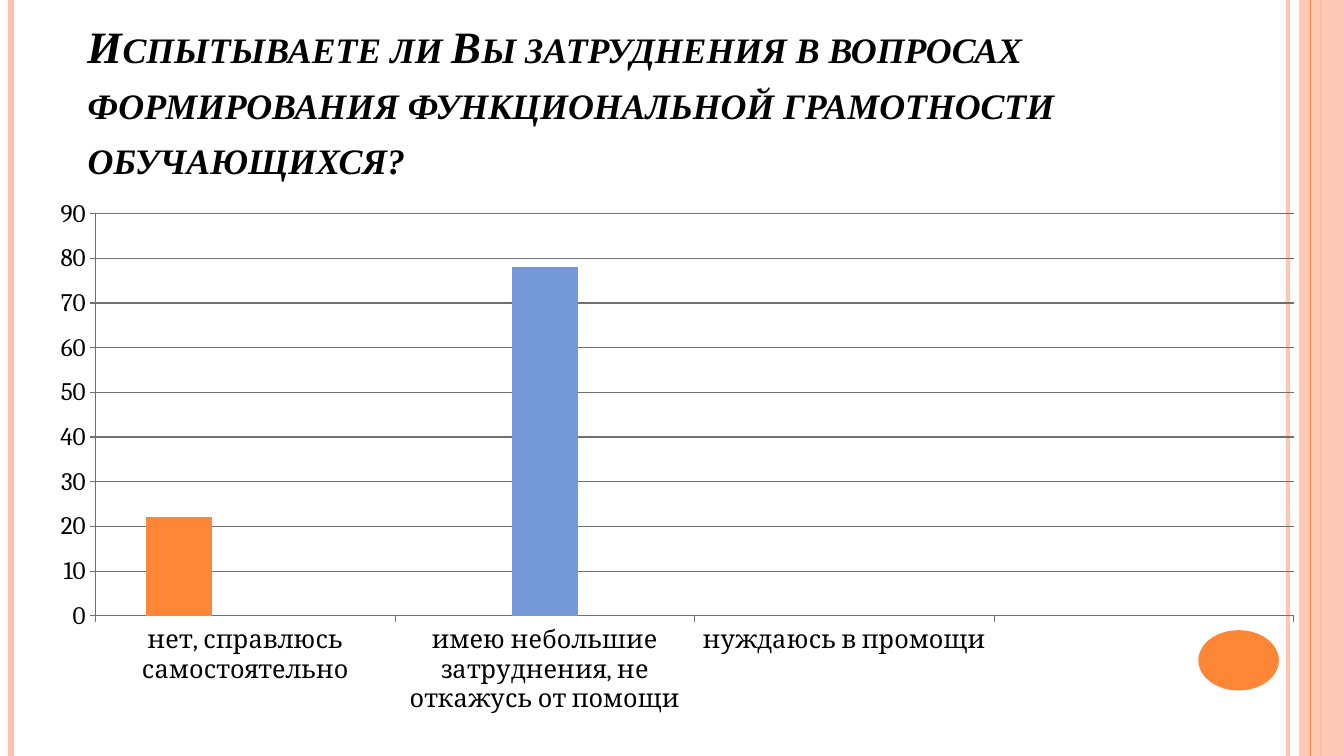
from lxml import etree
from pptx import Presentation
from pptx.chart.data import CategoryChartData
from pptx.dml.color import RGBColor
from pptx.enum.chart import XL_CHART_TYPE, XL_TICK_MARK
from pptx.enum.shapes import MSO_CONNECTOR, MSO_SHAPE
from pptx.enum.text import MSO_ANCHOR
from pptx.oxml import parse_xml
from pptx.oxml.ns import nsdecls, qn
from pptx.util import Cm, Pt

COLUMNS = XL_CHART_TYPE.COLUMN_CLUSTERED
OUTSIDE = XL_TICK_MARK.OUTSIDE
STRAIGHT = MSO_CONNECTOR.STRAIGHT
RECTANGLE, OVAL = MSO_SHAPE.RECTANGLE, MSO_SHAPE.OVAL
BOTTOM = MSO_ANCHOR.BOTTOM

WIDTH, HEIGHT = 33.87, 19.05
PEACH, ORANGE, BLUE, RED = "FEC3AE", "FE8637", "7598D9", "B32C16"
BLACK, GREY = "000000", "707070"
TITLE = ("Испытываете ли Вы затруднения в вопросах формирования "
         "функциональной грамотности обучающихся?")
ANSWERS = ["нет, справлюсь самостоятельно",
           "имею небольшие затруднения, не откажусь от помощи",
           "нуждаюсь в промощи", ""]
SERIES = [("Series 1", [22, None, None, None], ORANGE),
          ("Series 2", [None, 78, None, None], BLUE),
          ("Series 3", [None, None, None, None], RED)]
BACK_STRIPES = [(32.46, PEACH, 3, 93), (0.28, PEACH, 4.5, 100), (33.3, ORANGE, 1.5, 100)]
FRONT_STRIPE = (33.02, ORANGE, 0.75, 100)
BAND = (32.74, 0, 1.13, HEIGHT)
DOT = (30.2, 15.88, 2.03, 1.52)
TITLE_BOX = (1.96, 1.57, 27.66, 3.18)
CHART_BOX = (0.89, 4.75, 32.36, 13.51)
PLOT_AREA = {"x": 0.047, "y": 0.047, "w": 0.933, "h": 0.75}


def paint(color_format, color):
    color_format.rgb = RGBColor.from_string(color)


def set_opacity(element, percent):
    if percent < 100:
        color = next(element.iter(qn("a:srgbClr")))
        etree.SubElement(color, qn("a:alpha")).set("val", str(percent * 1000))


def add_stripe(page, x, color, weight, opacity):
    stripe = page.shapes.add_connector(STRAIGHT, Cm(x), Cm(0), Cm(x), Cm(HEIGHT))
    paint(stripe.line.color, color)
    stripe.line.width = Pt(weight)
    properties = stripe._element.spPr
    set_opacity(properties, opacity)
    etree.SubElement(properties, qn("a:effectLst"))


def add_filled(page, kind, place, color, opacity=100):
    shape = page.shapes.add_shape(kind, *map(Cm, place))
    shape.shadow.inherit = False
    shape.fill.solid()
    paint(shape.fill.fore_color, color)
    shape.line.fill.background()
    set_opacity(shape._element.spPr, opacity)


def add_title(page):
    box = page.shapes.add_textbox(*map(Cm, TITLE_BOX))
    frame = box.text_frame
    frame.word_wrap = True
    frame.vertical_anchor = BOTTOM
    para = frame.paragraphs[0]
    para.line_spacing = 1.03
    span = para.add_run()
    span.text = TITLE
    font = span.font
    font.name, font.size = "Times New Roman", Pt(32)
    font.bold = font.italic = True
    paint(font.color, BLACK)
    span._r.get_or_add_rPr().set("cap", "small")


def add_answer_chart(page):
    data = CategoryChartData()
    data.categories = ANSWERS
    for name, values, color in SERIES:
        data.add_series(name, values)
    chart = page.shapes.add_chart(COLUMNS, *map(Cm, CHART_BOX), data).chart
    chart.has_legend = chart.has_title = False
    chart.font.name, chart.font.size = "Cambria", Pt(18)
    paint(chart.font.color, BLACK)

    plot = chart.plots[0]
    plot.gap_width, plot.overlap = 150, 0
    plot.vary_by_categories = False
    for series, (name, values, color) in zip(plot.series, SERIES):
        series.format.fill.solid()
        paint(series.format.fill.fore_color, color)

    scale = chart.value_axis
    scale.minimum_scale, scale.maximum_scale, scale.major_unit = 0, 90, 10
    scale.has_major_gridlines = True
    for axis in (scale, chart.category_axis):
        axis.major_tick_mark = OUTSIDE
        paint(axis.format.line.color, GREY)
    paint(scale.major_gridlines.format.line.color, GREY)

    sizes = "".join(f'<c:{key} val="{part}"/>' for key, part in PLOT_AREA.items())
    layout = parse_xml(
        f'<c:layout {nsdecls("c")}><c:manualLayout><c:layoutTarget val="inner"/>'
        f'<c:xMode val="edge"/><c:yMode val="edge"/>{sizes}</c:manualLayout></c:layout>')
    area = next(chart._chartSpace.iter(qn("c:plotArea")))
    for default in area.findall(qn("c:layout")):
        area.remove(default)
    area.insert(0, layout)


def main():
    """Build the survey slide with its title and column chart."""
    deck = Presentation()
    deck.slide_width, deck.slide_height = Cm(WIDTH), Cm(HEIGHT)
    page = deck.slides.add_slide(deck.slide_layouts[6])
    for stripe in BACK_STRIPES:
        add_stripe(page, *stripe)
    add_filled(page, RECTANGLE, BAND, PEACH, 87)
    add_stripe(page, *FRONT_STRIPE)
    add_filled(page, OVAL, DOT, ORANGE)
    add_title(page)
    add_answer_chart(page)
    deck.save("out.pptx")


if __name__ == "__main__":
    main()
